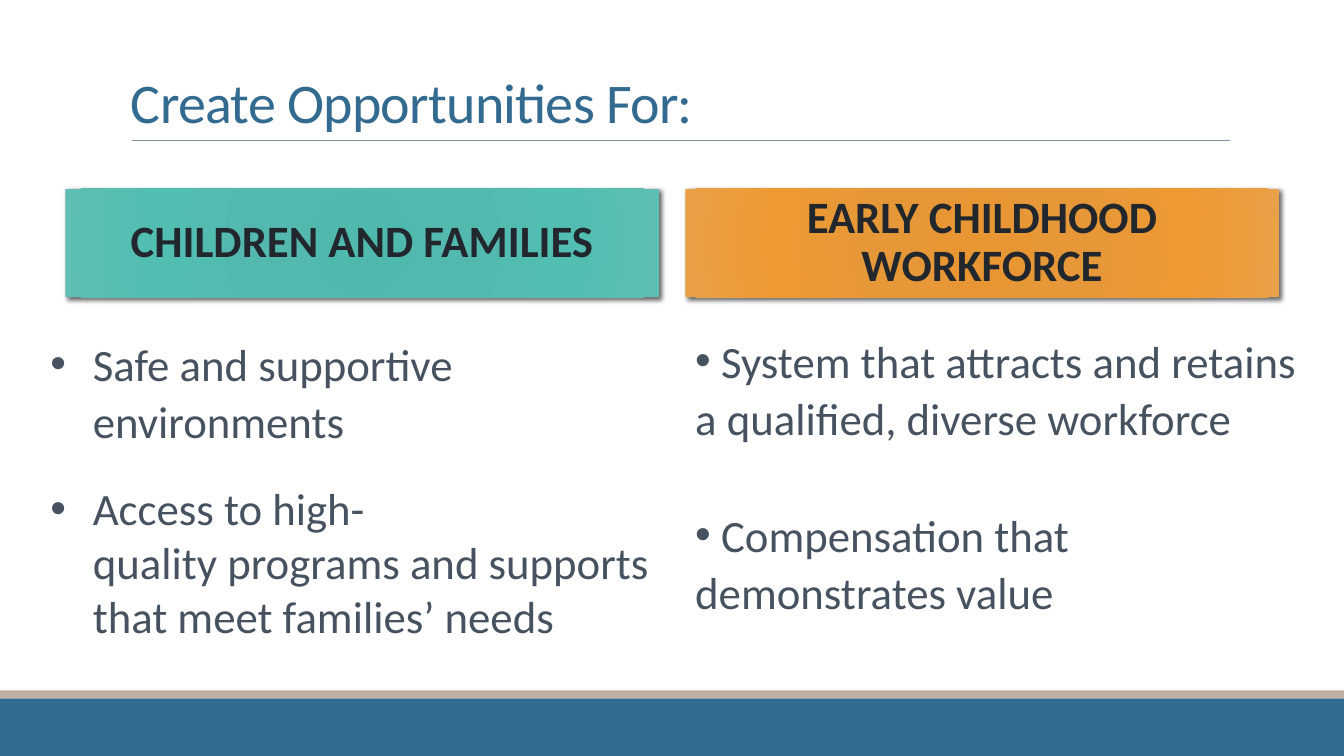
"""Build the slide on opportunities for families and the early childhood workforce."""
import pptx
import pptx.dml.color
import pptx.enum.shapes
import pptx.enum.text
import pptx.oxml
import pptx.oxml.ns
import pptx.util

Cm, Pt = pptx.util.Cm, pptx.util.Pt
ALIGN = pptx.enum.text.PP_ALIGN
ANCHOR = pptx.enum.text.MSO_ANCHOR
FONT = "Calibri"
COLORS = {"blue": "336A90", "sand": "BFB0A3", "rule": "8293A4", "dark": "21272D", "slate": "475260"}
TEAL = {0: "50B9AD", 34: "53B9AE", 70: "52BEB2", 100: "5FBEB3"}
AMBER = {0: "E79633", 34: "E69737", 70: "ED9A34", 100: "E9A046"}


def color(name):
    return pptx.dml.color.RGBColor.from_string(COLORS[name])


def element(xml):
    space = pptx.oxml.ns.nsdecls("a")
    return pptx.oxml.parse_xml(xml.replace(">", f" {space}>", 1))


def place(shape, left, top, width, height):
    shape.left, shape.top = Cm(left), Cm(top)
    shape.width, shape.height = Cm(width), Cm(height)


def write(shape, *texts, size=32, tint="slate", bold=False, align=ALIGN.LEFT, anchor=ANCHOR.TOP,
          line=1.0, gap=0, hang=0, bullet=False, inset=(0.25, 0.13), track=0):
    frame = shape.text_frame
    frame.word_wrap = True
    frame.auto_size = pptx.enum.text.MSO_AUTO_SIZE.NONE
    frame.vertical_anchor = anchor
    frame.margin_left = frame.margin_right = Cm(inset[0])
    frame.margin_top = frame.margin_bottom = Cm(inset[1])
    lines = line if isinstance(line, tuple) else (line,) * len(texts)
    for count, (text, pitch) in enumerate(zip(texts, lines)):
        para = frame.add_paragraph() if count else frame.paragraphs[0]
        run = para.add_run()
        run.text = text
        para.alignment, para.line_spacing = align, pitch
        para.space_before, para.space_after = Pt(gap if count else 0), Pt(0)
        props = para._p.get_or_add_pPr()
        props.set("marL", str(Cm(hang)))
        props.set("indent", str(-Cm(hang)))
        if bullet:
            props.append(element('<a:buFont typeface="Arial"/>'.replace("/>", "></a:buFont>")))
            props.append(element('<a:buChar char="•"></a:buChar>'))
        else:
            props.append(element("<a:buNone></a:buNone>"))
        font = run.font
        font.name, font.size, font.bold = FONT, Pt(size), bold
        font.color.rgb = color(tint)
        if track:
            run._r.get_or_add_rPr().set("spc", str(track))


def header(shape, text, left, stops):
    place(shape, left, 4.75, 14.96, 2.74)
    marks = "".join(f'<a:gs pos="{pos * 1000}"><a:srgbClr val="{tone}"/></a:gs>'
                    for pos, tone in stops.items())
    props = shape._element.spPr
    props.append(element('<a:prstGeom prst="rect"><a:avLst/></a:prstGeom>'))
    props.append(element(
        f'<a:gradFill rotWithShape="1"><a:gsLst>{marks}</a:gsLst><a:path path="circle">'
        '<a:fillToRect l="100000" t="100000" r="100000" b="100000"/></a:path></a:gradFill>'))
    props.append(element(
        f'<a:effectLst><a:outerShdw blurRad="{Pt(3.5)}" dist="{Pt(2)}" dir="2700000">'
        '<a:srgbClr val="000000"><a:alpha val="60000"/></a:srgbClr></a:outerShdw></a:effectLst>'))
    write(shape, text, tint="dark", bold=True, align=ALIGN.CENTER, anchor=ANCHOR.MIDDLE, line=0.9)


def band(slide, top, height, tint):
    shape = slide.shapes.add_shape(pptx.enum.shapes.MSO_SHAPE.RECTANGLE, 0, Cm(top), Cm(33.87), Cm(height))
    shape.shadow.inherit = False
    shape.fill.solid()
    shape.fill.fore_color.rgb = color(tint)
    shape.line.fill.background()


def rule(slide, left, right, top):
    line = slide.shapes.add_connector(
        pptx.enum.shapes.MSO_CONNECTOR.STRAIGHT, Cm(left), Cm(top), Cm(right), Cm(top))
    line.line.color.rgb = color("rule")
    line.line.width = Pt(0.5)
    line._element.spPr.append(element("<a:effectLst></a:effectLst>"))


def main():
    deck = pptx.Presentation()
    deck.slide_width, deck.slide_height = Cm(33.87), Cm(19.05)
    slide = deck.slides.add_slide(deck.slide_layouts.get_by_name("Comparison"))
    title, left_head, left_list, right_head, right_list = slide.placeholders

    band(slide, 17.6, 1.45, "blue")
    band(slide, 17.4, 0.2, "sand")
    rule(slide, 3.33, 31, 3.53)

    place(title, 3.05, 0.79, 27.94, 2.74)
    write(title, "Create Opportunities For:", size=40, tint="blue", anchor=ANCHOR.BOTTOM,
          line=0.85, track=-50)
    header(left_head, "CHILDREN AND FAMILIES", 1.65, TEAL)
    header(right_head, "EARLY CHILDHOOD WORKFORCE", 17.27, AMBER)

    place(left_list, 0.94, 8.2, 15.98, 8.6)
    write(left_list, "Safe and\u00a0supportive environments",
          "Access to high-quality\u00a0programs and\u00a0supports that\u00a0meet families’\u00a0needs",
          line=(1.07, 1.0), gap=24, hang=1.07, bullet=True, inset=(0.33, 0.18))
    place(right_list, 17.27, 8.18, 15.85, 8.6)
    write(right_list, " System that attracts and retains a qualified, diverse workforce",
          " Compensation that demonstrates value", line=1.07, gap=42, bullet=True)
    deck.save("out.pptx")


if __name__ == "__main__":
    main()
